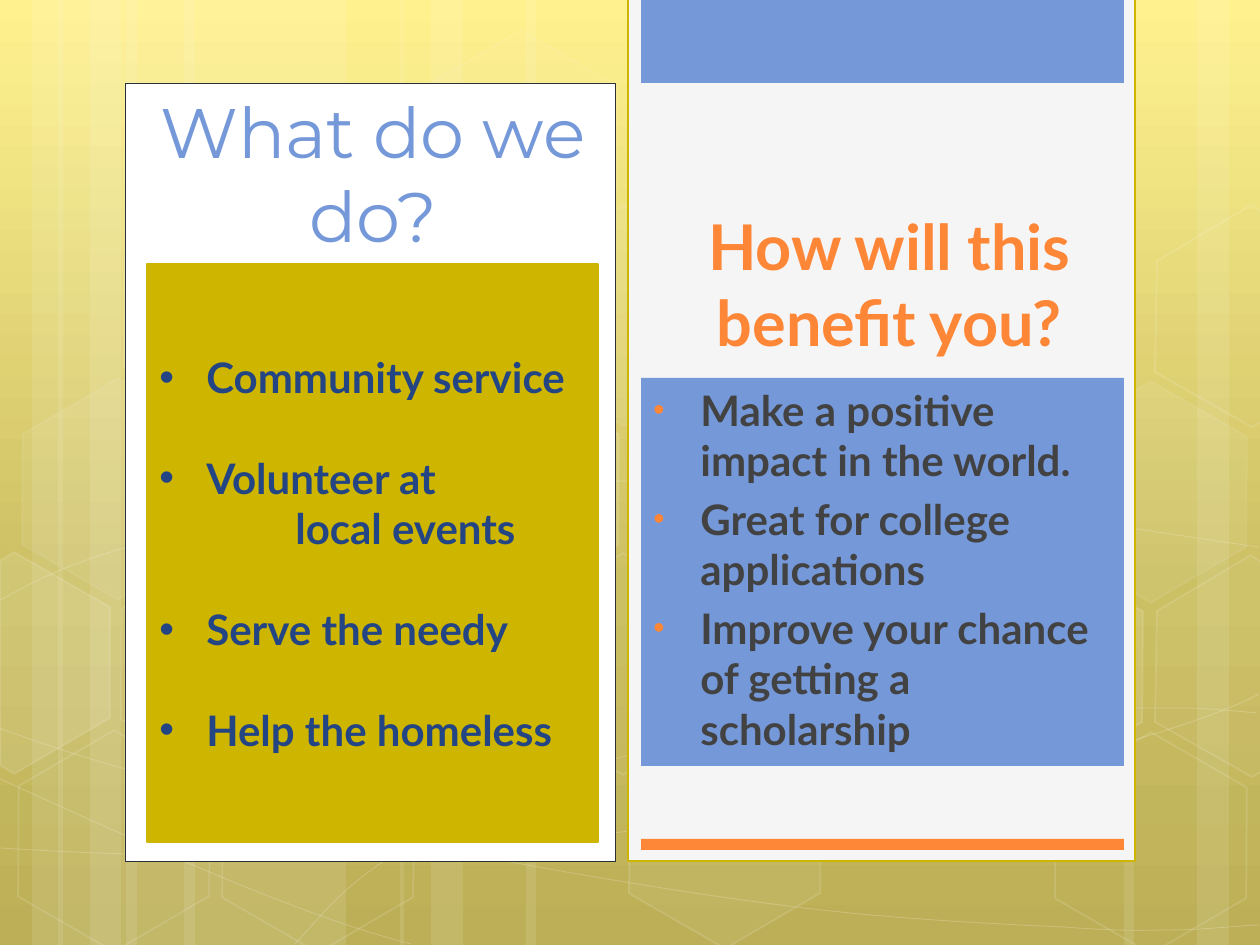
from copy import deepcopy
from dataclasses import dataclass
from typing import Optional

from lxml.etree import SubElement
from pptx import Presentation
from pptx.dml.color import RGBColor
from pptx.enum.shapes import MSO_SHAPE
from pptx.enum.text import MSO_ANCHOR, PP_ALIGN
from pptx.oxml.ns import qn
from pptx.util import Pt

PX = 914400 / 126
WHITE = RGBColor(0xFF, 0xFF, 0xFF)
PAPER = RGBColor(0xF5, 0xF5, 0xF5)
BLUE = RGBColor(0x75, 0x98, 0xD9)
NAVY = RGBColor(0x24, 0x45, 0x83)
MUSTARD = RGBColor(0xCE, 0xB5, 0x00)
ORANGE = RGBColor(0xFE, 0x86, 0x37)
CHARCOAL = RGBColor(0x42, 0x42, 0x42)
INK = RGBColor(0x2B, 0x2F, 0x36)
BACKDROP = [(0, RGBColor(0xFF, 0xF0, 0x82)), (0.62, RGBColor(0xC7, 0xB9, 0x53)),
            (1, RGBColor(0xB6, 0xA7, 0x44))]
HEXAGON_SIZE = (220, 192)
BULLET_INDENT = 47


@dataclass
class Panel:
    left: int
    top: int
    width: int
    height: int
    fill: Optional[RGBColor] = None
    line: Optional[RGBColor] = None
    line_width: float = 1.25


@dataclass
class Hexagon:
    left: int
    top: int
    fill_alpha: int = 0
    line_alpha: int = 12


@dataclass
class Item:
    text: str
    gap: float = 0
    bullet: bool = True
    margin: int = BULLET_INDENT


BANDS = [(126, 220), (0, 63), (32, 105), (184, 220), (58, 63), (90, 105),
         (914, 220), (1197, 63), (1124, 105), (526, 388), (400, 63), (431, 105)]
# Each curve is a start point followed by triples of Bezier points.
CURVES = [
    [(-1, 848), (67, 852), (135, 856), (229, 854), (324, 853), (440, 851), (566, 838),
     (693, 825), (872, 801), (987, 777), (1103, 753), (1220, 716), (1259, 694)],
    [(-1, 601), (34, 581), (71, 562), (142, 543), (214, 524), (315, 496), (427, 488),
     (539, 480), (674, 478), (813, 488), (951, 498), (1183, 537), (1259, 547)],
    [(-4, 777), (149, 847), (301, 916), (411, 944)],
    [(-1, 728), (38, 742), (77, 756), (150, 776), (224, 795), (334, 827), (438, 848),
     (543, 869), (677, 892), (780, 905), (885, 919), (997, 924), (1063, 927),
     (1130, 932), (1148, 930), (1179, 930), (1212, 929), (1235, 926), (1259, 925)],
    [(295, 944), (318, 919), (339, 893), (370, 871), (401, 848), (442, 823), (478, 805),
     (513, 788), (534, 780), (581, 767), (627, 755), (712, 737), (756, 728),
     (800, 719), (806, 719), (845, 717), (887, 713), (946, 709), (990, 708),
     (1033, 707), (1106, 708), (1106, 708), (1134, 708), (1162, 708), (1189, 708),
     (1213, 709), (1234, 711), (1245, 712), (1256, 713), (1253, 712), (1256, 713)],
]
HEXAGONS = [
    Hexagon(413, 394, 10), Hexagon(513, 568), Hexagon(514, 219, 7, 8),
    Hexagon(411, 45, 4, 8), Hexagon(615, 742, 6), Hexagon(4, 745),
    Hexagon(8, 393, 7, 8), Hexagon(107, 568), Hexagon(208, 746), Hexagon(110, 215),
    Hexagon(937, 571, 10), Hexagon(1041, 747), Hexagon(1041, 396, 7, 8),
]
RIGHT_EDGE = [(1157, 261), (1251, 205), (1261, 212), (1261, 422), (1252, 427), (1155, 372)]
CUT_HEXAGONS = [
    ([(0, 561), (14, 552), (110, 607), (110, 718), (14, 774), (0, 765)], 10),
    ([(x, y + 350) for x, y in RIGHT_EDGE], 4),
    (RIGHT_EDGE, 0),
]
PANELS = [
    Panel(628, -3, 507, 864, PAPER, MUSTARD),
    Panel(641, -3, 483, 86, BLUE),
    Panel(125, 83, 490, 778, WHITE, INK, 0.25),
    Panel(641, 839, 483, 11, ORANGE),
]
BENEFITS = [
    Item("Make a positive impact in the world."),
    Item("Great for college applications", 4.8),
    Item("Improve your chance of getting a scholarship", 4.8),
]
ACTIVITIES = [
    Item("Community service"),
    Item("Volunteer at", 28.8),
    Item("local events", bullet=False, margin=136),
    Item("Serve the needy", 28.8),
    Item("Help the homeless", 28.8),
]


def emu(pixels: float) -> int:
    return round(pixels * PX)


def paint(shape, fill=None, line=None, line_width=1.0, fill_alpha=100, line_alpha=100):
    """Set fill and outline; alphas are percentages."""
    shape.shadow.inherit = False
    if fill is None:
        shape.fill.background()
    else:
        shape.fill.solid()
        shape.fill.fore_color.rgb = fill
    if line is None:
        shape.line.fill.background()
    else:
        shape.line.color.rgb = line
        shape.line.width = Pt(line_width)
    properties = shape._element.spPr
    for query, alpha in (("a:solidFill/a:srgbClr", fill_alpha),
                         ("a:ln/a:solidFill/a:srgbClr", line_alpha)):
        for color in properties.xpath(query):
            if alpha < 100:
                SubElement(color, qn("a:alpha"), val=str(alpha * 1000))


def add_panel(page, panel: Panel, fill_alpha: int = 100):
    box = page.shapes.add_shape(MSO_SHAPE.RECTANGLE, emu(panel.left), emu(panel.top),
                                emu(panel.width), emu(panel.height))
    paint(box, panel.fill, panel.line, panel.line_width, fill_alpha)
    return box


def add_outline(page, points: list, close: bool):
    builder = page.shapes.build_freeform(*points[0], scale=PX)
    builder.add_line_segments(points[1:], close=close)
    return builder.convert_to_shape()


def add_curve(page, points: list) -> None:
    """Draw an outline, then regroup its points three by three as Bezier segments."""
    shape = add_outline(page, points, False)
    outline = shape._element.xpath(".//a:path")[0]
    lines = outline.findall(qn("a:lnTo"))
    for start in range(0, len(lines), 3):
        segment = SubElement(outline, qn("a:cubicBezTo"))
        for line in lines[start:start + 3]:
            segment.append(line[0])
            outline.remove(line)
    paint(shape, None, WHITE, 0.5, line_alpha=20)


def add_hexagon(page, hexagon: Hexagon) -> None:
    shape = page.shapes.add_shape(MSO_SHAPE.HEXAGON, emu(hexagon.left), emu(hexagon.top),
                                  *map(emu, HEXAGON_SIZE))
    shape.adjustments[0] = 0.285
    shape.rotation = 30
    paint(shape, WHITE if hexagon.fill_alpha else None, WHITE, 1,
          hexagon.fill_alpha, hexagon.line_alpha)


def add_bullet(para, color: RGBColor, percent: int) -> None:
    properties = para._p.get_or_add_pPr()
    properties.set("indent", str(-emu(BULLET_INDENT)))
    SubElement(SubElement(properties, qn("a:buClr")), qn("a:srgbClr"), val=str(color))
    SubElement(properties, qn("a:buSzPct"), val=str(percent * 1000))
    SubElement(properties, qn("a:buFont"), typeface="Arial")
    SubElement(properties, qn("a:buChar"), char="•")


def write(box, items: list, *, size, color, font="Lato", bold=True, anchor=MSO_ANCHOR.TOP,
          align=PP_ALIGN.LEFT, bullet_color=None, bullet_percent=100) -> None:
    frame = box.text_frame
    frame.word_wrap = True
    frame.vertical_anchor = anchor
    for index, item in enumerate(items):
        para = frame.add_paragraph() if index else frame.paragraphs[0]
        para._p.get_or_add_pPr().set("marL", str(emu(item.margin)))
        if item.bullet:
            add_bullet(para, bullet_color or color, bullet_percent)
        para.alignment = align
        if item.gap:
            para.space_before = Pt(item.gap)
        span = para.add_run()
        span.text = item.text
        span.font.size, span.font.bold, span.font.name = Pt(size), bold, font
        span.font.color.rgb = color


def add_heading(page, text: str, bounds: tuple, **style) -> None:
    box = page.shapes.add_textbox(*map(emu, bounds))
    write(box, [Item(text, bullet=False, margin=0)], align=PP_ALIGN.CENTER, **style)


def add_backdrop(page) -> None:
    fill = page.background.fill
    fill.gradient()
    fill.gradient_angle = 270
    stops = page._element.xpath(".//a:gsLst")[0]
    stops.append(deepcopy(stops[-1]))
    for stop, (position, color) in zip(fill.gradient_stops, BACKDROP):
        stop.position, stop.color.rgb = position, color
    for left, width in BANDS:
        add_panel(page, Panel(left, 0, width, 945, WHITE), fill_alpha=10)
    for curve in CURVES:
        add_curve(page, curve)
    for hexagon in HEXAGONS:
        add_hexagon(page, hexagon)
    for points, alpha in CUT_HEXAGONS:
        paint(add_outline(page, points, True), WHITE if alpha else None, WHITE, 1, alpha, 12)


def main() -> None:
    deck = Presentation()
    deck.slide_width, deck.slide_height = emu(1260), emu(945)
    page = deck.slides.add_slide(deck.slide_layouts[6])
    add_backdrop(page)
    for panel in PANELS:
        add_panel(page, panel)
    add_heading(page, "How will this benefit you?", (662, 163, 455, 202),
                size=36, color=ORANGE, anchor=MSO_ANCHOR.BOTTOM)
    write(add_panel(page, Panel(641, 378, 483, 388, BLUE)), BENEFITS, size=24,
          color=CHARCOAL, bullet_color=ORANGE, bullet_percent=76)
    write(add_panel(page, Panel(147, 264, 451, 578, MUSTARD, MUSTARD)), ACTIVITIES,
          size=24, color=NAVY, anchor=MSO_ANCHOR.MIDDLE)
    add_heading(page, "What do we do?", (147, 82, 452, 183),
                size=40, color=BLUE, font="Montserrat", bold=False)
    deck.save("out.pptx")


if __name__ == "__main__":
    main()
